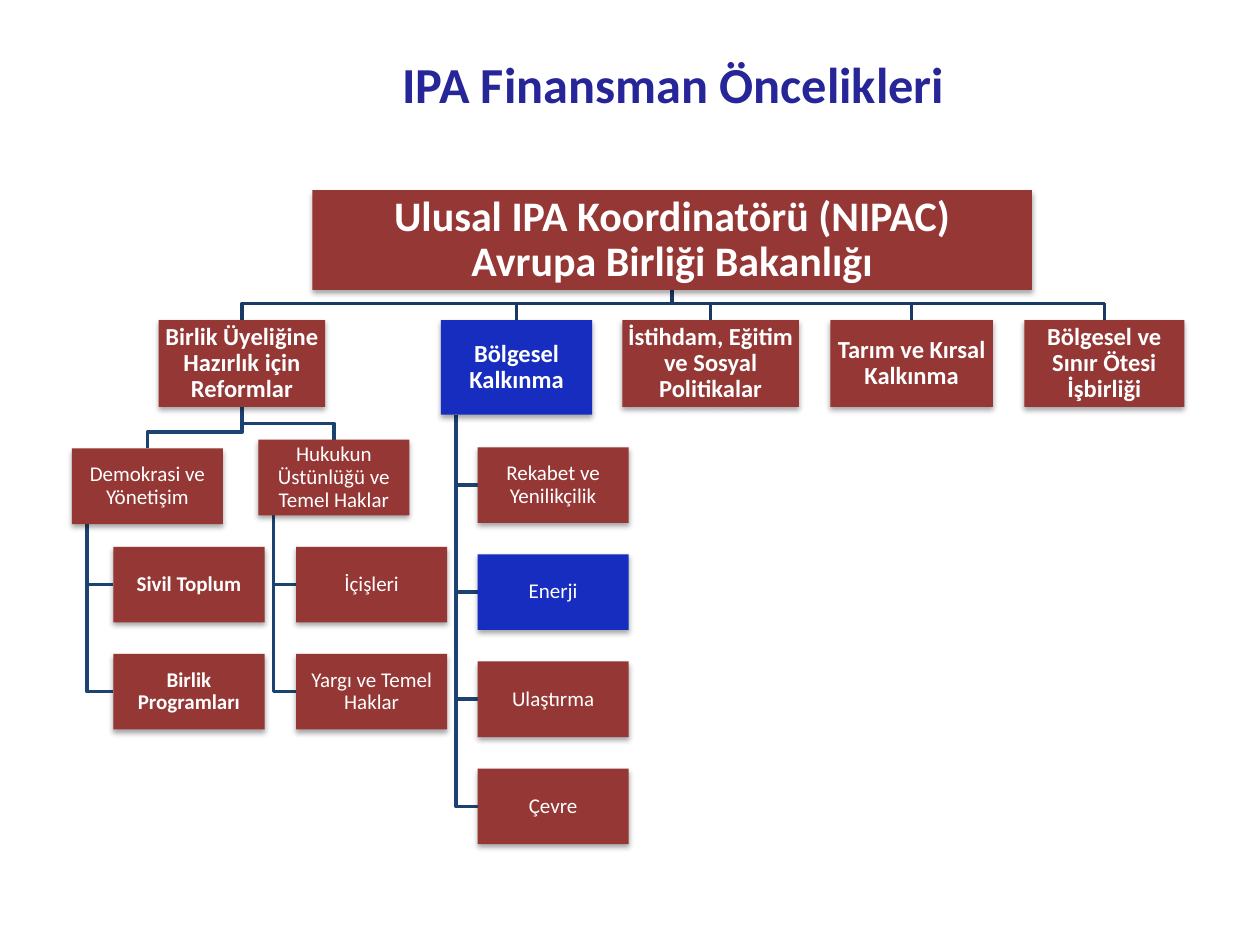
"""Build the organisation chart of IPA funding priorities."""
import dataclasses

import lxml.etree
import pptx
import pptx.dml.color
import pptx.enum.shapes
import pptx.enum.text
import pptx.oxml.ns
import pptx.util

COLUMNS, ROWS = 10, 7.5
CELL = pptx.util.Inches(1)
LEAF_WIDTH, LEAF_HEIGHT, LEAF_STEP = 1.2, 0.6, 0.85
PRIORITY_TOP, PRIORITY_HEIGHT = 2.54, 0.69
FORK_RISE = 0.13
STEM_SHARE = 0.1

TITLE_BLUE = pptx.dml.color.RGBColor(0x26, 0x26, 0x99)
BRICK = pptx.dml.color.RGBColor(0x95, 0x37, 0x35)
HIGHLIGHT = pptx.dml.color.RGBColor(0x17, 0x2D, 0xBF)
WHITE = pptx.dml.color.RGBColor(0xFF, 0xFF, 0xFF)
TOP_LINK = pptx.dml.color.RGBColor(0x19, 0x3A, 0x64)
LOWER_LINK = pptx.dml.color.RGBColor(0x1C, 0x42, 0x71)

RECTANGLE = pptx.enum.shapes.MSO_SHAPE.RECTANGLE
CENTRE = pptx.enum.text.PP_ALIGN.CENTER
MIDDLE = pptx.enum.text.MSO_ANCHOR.MIDDLE
SHADOW = (
    f'<a:effectLst {pptx.oxml.ns.nsdecls("a")}>'
    '<a:outerShdw blurRad="40000" dist="23000" dir="5400000" rotWithShape="0">'
    '<a:srgbClr val="000000"><a:alpha val="35000"/></a:srgbClr>'
    "</a:outerShdw></a:effectLst>"
)


@dataclasses.dataclass
class Unit:
    """One box of the chart, placed in columns and rows, with its subordinates."""
    label: str
    left: float
    top: float
    width: float = LEAF_WIDTH
    height: float = LEAF_HEIGHT
    size: int = 12
    bold: bool = False
    fill: pptx.dml.color.RGBColor = BRICK
    link: pptx.dml.color.RGBColor = LOWER_LINK
    stacked: bool = False
    members: list = dataclasses.field(default_factory=list)

    @property
    def centre(self):
        """Return the column of the middle of the box."""
        return self.left + self.width / 2

    @property
    def bottom(self):
        """Return the row of the lower edge."""
        return self.top + self.height


def apply(target, formats):
    """Set every attribute named in formats on target."""
    for name, value in formats.items():
        setattr(target, name, value)


def grid(value):
    """Turn a number of grid cells into a length."""
    return pptx.util.Emu(round(value * CELL))


def place(left, top, width, height):
    """Return a frame given in grid cells as a dict of lengths."""
    return dict(left=grid(left), top=grid(top), width=grid(width), height=grid(height))


def margins(side, top, bottom):
    """Return text margins given in grid cells as a dict of lengths."""
    return dict(margin_left=grid(side), margin_right=grid(side),
                margin_top=grid(top), margin_bottom=grid(bottom))


def write(frame, text, frame_format, font_format, colour, spacing):
    """Fill a text frame with one centred paragraph."""
    apply(frame, dict(vertical_anchor=MIDDLE, **frame_format))
    paragraph = frame.paragraphs[0]
    paragraph.text = text
    apply(paragraph, dict(alignment=CENTRE, line_spacing=spacing))
    for run in paragraph.runs:
        apply(run.font, dict(name="Calibri", **font_format))
        run.font.color.rgb = colour


def add_title(slide, text):
    """Move and format the title placeholder."""
    title = slide.shapes.title
    apply(title, place(2.11, 0.3, 6.47, 0.68))
    write(title.text_frame, text, dict(word_wrap=False, **margins(0.1, 0.1, 0.05)),
          dict(size=pptx.util.Pt(28.8), bold=True), TITLE_BLUE, 1.0)


def add_link(slide, points, colour):
    """Draw one bent line through points given in grid cells."""
    start, *rest = [(grid(column), grid(row)) for column, row in points]
    builder = slide.shapes.build_freeform(*start)
    builder.add_line_segments(rest, close=False)
    link = builder.convert_to_shape()
    link.shadow.inherit = False
    link.fill.background()
    link.line.color.rgb = colour
    link.line.width = pptx.util.Pt(2)


def add_links(slide, unit):
    """Join a unit to its members, and those to theirs."""
    for member in unit.members:
        if unit.stacked:
            stem = unit.left + unit.width * STEM_SHARE
            middle = member.top + member.height / 2
            points = [(stem, unit.bottom), (stem, middle), (member.left, middle)]
        else:
            bend = member.top - FORK_RISE
            points = [(unit.centre, unit.bottom), (unit.centre, bend),
                      (member.centre, bend), (member.centre, member.top)]
        add_link(slide, points, unit.link)
        add_links(slide, member)


def add_boxes(slide, unit):
    """Draw the box of a unit, then those of its members."""
    frame = place(unit.left, unit.top, unit.width, unit.height)
    box = slide.shapes.add_shape(RECTANGLE, **frame)
    box.fill.solid()
    box.fill.fore_color.rgb = unit.fill
    box.line.fill.background()
    box._element.spPr.append(lxml.etree.fromstring(SHADOW))
    write(box.text_frame, unit.label, dict(word_wrap=True, **margins(0.01, 0.01, 0.01)),
          dict(size=pptx.util.Pt(unit.size), bold=unit.bold), WHITE, 0.9)
    for member in unit.members:
        add_boxes(slide, member)


def stack(left, top, labels, **formats):
    """Return leaf units set below each other at equal steps."""
    return [Unit(label, left, top + row * LEAF_STEP, **formats)
            for row, label in enumerate(labels)]


def priority(label, left, width, **formats):
    """Return a unit of the row of priorities."""
    settings = {"height": PRIORITY_HEIGHT, "size": 14, "bold": True, **formats}
    return Unit(label, left, PRIORITY_TOP, width, **settings)


def plan_chart():
    """Return the coordinator with all units below it."""
    democracy = Unit("Demokrasi ve Yönetişim", 0.57, 3.56, stacked=True, members=stack(
        0.9, 4.34, ["Sivil Toplum", "Birlik Programları"], bold=True))
    rule_of_law = Unit("Hukukun Üstünlüğü ve Temel Haklar", 2.05, 3.49, stacked=True,
                       members=stack(2.35, 4.34, ["İçişleri", "Yargı ve Temel Haklar"]))
    sectors = stack(3.79, 3.55, ["Rekabet ve Yenilikçilik", "Enerji", "Ulaştırma", "Çevre"])
    sectors[1].fill = HIGHLIGHT
    priorities = [
        priority("Birlik Üyeliğine Hazırlık için Reformlar", 1.26, 1.32,
                 members=[democracy, rule_of_law]),
        priority("Bölgesel Kalkınma", 3.5, 1.2, height=0.75, fill=HIGHLIGHT,
                 stacked=True, members=sectors),
        priority("İstihdam, Eğitim ve Sosyal Politikalar", 4.94, 1.4),
        priority("Tarım ve Kırsal Kalkınma", 6.59, 1.29),
        priority("Bölgesel ve Sınır Ötesi İşbirliği", 8.13, 1.27),
    ]
    return Unit("Ulusal IPA Koordinatörü (NIPAC)\nAvrupa Birliği Bakanlığı", 2.48, 1.51,
                5.71, 0.79, size=24, bold=True, link=TOP_LINK, members=priorities)


def main():
    """Build and save the slide."""
    deck = pptx.Presentation()
    apply(deck, dict(slide_width=grid(COLUMNS), slide_height=grid(ROWS)))
    slide = deck.slides.add_slide(deck.slide_layouts.get_by_name("Title Only"))
    add_title(slide, "IPA Finansman Öncelikleri")
    coordinator = plan_chart()
    add_links(slide, coordinator)
    add_boxes(slide, coordinator)
    deck.save("out.pptx")


if __name__ == "__main__":
    main()
